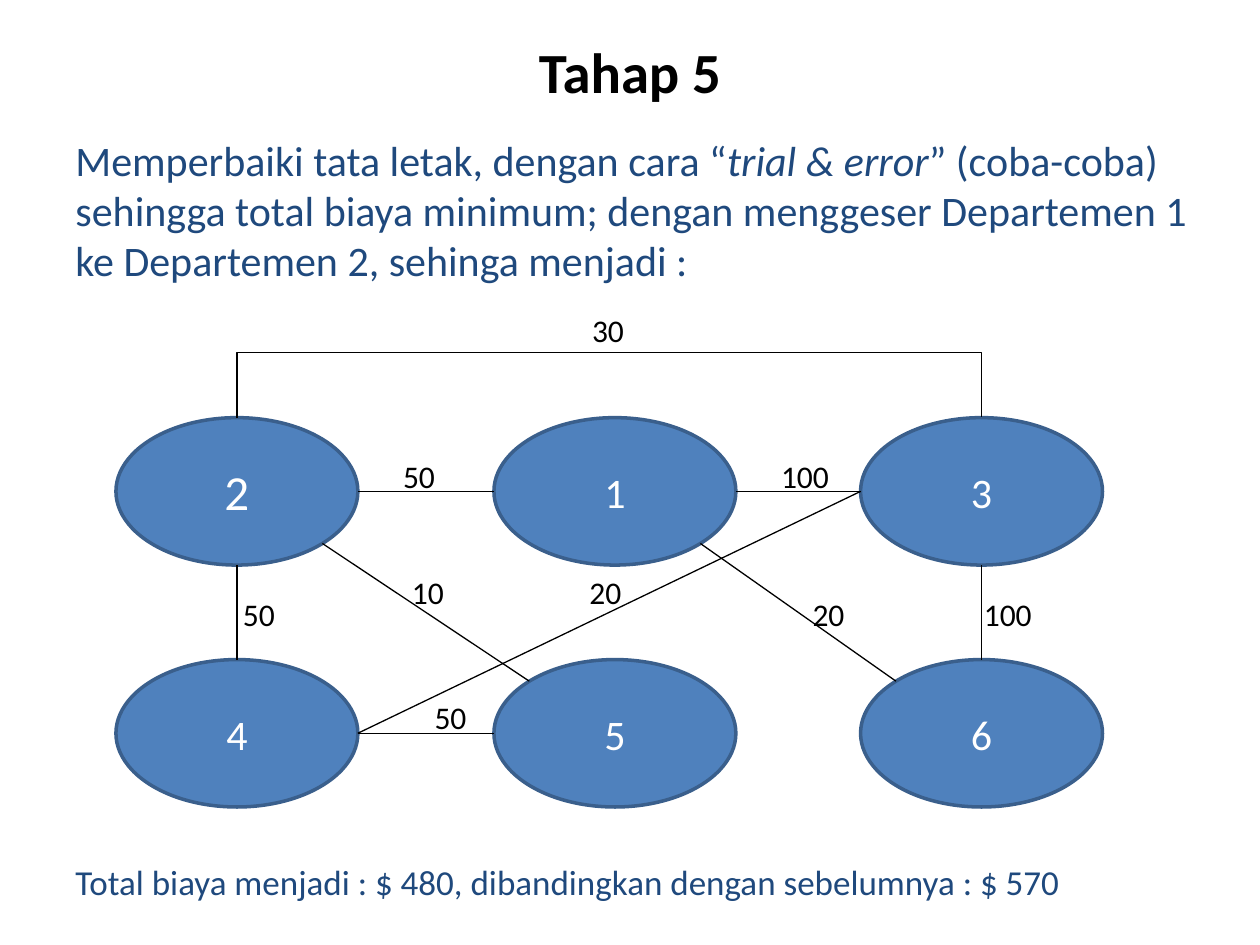
from math import sqrt

from lxml import etree
from pptx import Presentation
from pptx.dml.color import RGBColor
from pptx.enum.shapes import MSO_CONNECTOR, MSO_SHAPE
from pptx.enum.text import MSO_ANCHOR, PP_ALIGN
from pptx.oxml.ns import qn
from pptx.util import Inches, Pt

STRAIGHT, ELBOW = MSO_CONNECTOR.STRAIGHT, MSO_CONNECTOR.ELBOW
OVAL = MSO_SHAPE.OVAL
TOP, MIDDLE = MSO_ANCHOR.TOP, MSO_ANCHOR.MIDDLE
LEFT, CENTER = PP_ALIGN.LEFT, PP_ALIGN.CENTER

# Content
FONT = "Calibri"
COLORS = {"text": "000000", "body": "1F497D", "fill": "4F81BD",
          "edge": "3A5F8C", "white": "FFFFFF"}
TITLE = "Tahap 5"
INTRO = [
    ("Memperbaiki tata letak, dengan cara “", False),
    ("trial & error", True),
    ("” (coba-coba) sehingga total biaya minimum; dengan menggeser "
     "Departemen 1 ke Departemen 2, sehinga menjadi :", False),
]
TOTAL = "Total biaya menjadi : $ 480, dibandingkan dengan sebelumnya : $ 570"
DEPARTMENTS = [["2", "1", "3"], ["4", "5", "6"]]
TEXT_SIZES = {"2": 28}  # every other department uses 24 pt

# Flows: from, side, to, side, cost, label left and top
FLOWS = [
    ("2", "right", "1", "left", "50", 3.10, 3.58),
    ("1", "right", "3", "left", "100", 6.10, 3.58),
    ("4", "right", "3", "left", "20", 4.58, 4.50),
    ("3", "bottom", "6", "top", "100", 7.71, 4.67),
    ("4", "right", "5", "left", "50", 3.35, 5.49),
    ("2", "bottom", "4", "top", "50", 1.83, 4.67),
    ("2", "lower right", "5", "upper left", "10", 3.17, 4.50),
    ("1", "lower right", "6", "upper left", "20", 6.35, 4.67),
]
OUTER_FLOW = ("2", "3", "30", 4.60, 2.42)

# Grid of department centres
COLUMNS = [1.88, 4.88, 7.79]
ROWS = [3.9, 5.82]
OVAL_W, OVAL_H = 1.92, 1.17
BRACKET_RISE = 0.53
DIAGONAL = sqrt(0.5)
SIDES = {"left": (-1, 0), "right": (1, 0), "top": (0, -1), "bottom": (0, 1),
         "lower right": (DIAGONAL, DIAGONAL),
         "upper left": (-DIAGONAL, -DIAGONAL)}
CENTERS = {name: (x, y) for names, y in zip(DEPARTMENTS, ROWS)
           for name, x in zip(names, COLUMNS)}


def color(name):
    return RGBColor.from_string(COLORS[name])


def place(shape, left, top, width, height):
    shape.left, shape.top = Inches(left), Inches(top)
    shape.width, shape.height = Inches(width), Inches(height)


def write(shape, runs, size, tint, align=LEFT, anchor=MIDDLE, wrap=True, bold=False):
    frame = shape.text_frame
    frame.word_wrap = wrap
    frame.vertical_anchor = anchor
    para = frame.paragraphs[0]
    para.alignment = align
    for text, italic in runs:
        span = para.add_run()
        span.text = text
        font = span.font
        font.name, font.size, font.bold, font.italic = FONT, Pt(size), bold, italic
        font.color.rgb = color(tint)


def add_text(slide, area, runs, size, tint, **options):
    box = slide.shapes.add_textbox(*map(Inches, area))
    write(box, runs, size, tint, **options)


def add_label(slide, cost, left, top):
    width = 0.2 + 0.14 * len(cost)
    add_text(slide, (left, top, width, 0.4), [(cost, False)], 18, "text",
             anchor=TOP, wrap=False)


def add_department(slide, name):
    x, y = CENTERS[name]
    oval = slide.shapes.add_shape(OVAL, 0, 0, 0, 0)
    place(oval, x - OVAL_W / 2, y - OVAL_H / 2, OVAL_W, OVAL_H)
    oval.shadow.inherit = False
    oval.fill.solid()
    oval.fill.fore_color.rgb = color("fill")
    oval.line.color.rgb = color("edge")
    oval.line.width = Pt(2)
    write(oval, [(name, False)], TEXT_SIZES.get(name, 24), "white", align=CENTER)


def side_point(name, side):
    (x, y), (dx, dy) = CENTERS[name], SIDES[side]
    return x + dx * OVAL_W / 2, y + dy * OVAL_H / 2


def add_line(slide, kind, start, end):
    line = slide.shapes.add_connector(kind, *map(Inches, (*start, *end)))
    line.line.color.rgb = color("text")
    line.line.width = Pt(0.75)
    etree.SubElement(line._element.spPr, qn("a:effectLst"))
    return line


def add_bracket(slide, first, last):
    # A thin elbow turned by 90 degrees; its bend lies above both ovals
    (x1, y), (x2, _) = side_point(first, "top"), side_point(last, "top")
    middle, half, thin = (x1 + x2) / 2, (x2 - x1) / 2, 0.01
    line = add_line(slide, ELBOW, (middle + thin / 2, y + half),
                    (middle - thin / 2, y - half))
    properties = line._element.spPr
    properties.find(qn("a:xfrm")).set("rot", "5400000")
    geometry = properties.find(qn("a:prstGeom"))
    adjustments = geometry.find(qn("a:avLst"))
    if adjustments is None:
        adjustments = etree.SubElement(geometry, qn("a:avLst"))
    bend = round(BRACKET_RISE / thin * 100000)
    etree.SubElement(adjustments, qn("a:gd"), name="adj1", fmla=f"val {bend}")


def main():
    deck = Presentation()
    deck.slide_width, deck.slide_height = Inches(10), Inches(7.5)
    slide = deck.slides.add_slide(deck.slide_layouts[5])

    # Title and explanation
    title = slide.shapes.title
    place(title, 0.5, 0.25, 9, 0.62)
    write(title, [(TITLE, False)], 32.4, "text", align=CENTER, bold=True)
    add_text(slide, (0.5, 1, 9.25, 1.33), INTRO, 24, "body")

    # Departments
    for name in CENTERS:
        add_department(slide, name)

    # Flows and their costs
    first, last, cost, left, top = OUTER_FLOW
    add_bracket(slide, first, last)
    add_label(slide, cost, left, top)
    for start, start_side, end, end_side, cost, left, top in FLOWS:
        add_line(slide, STRAIGHT, side_point(start, start_side),
                 side_point(end, end_side))
        add_label(slide, cost, left, top)

    # Result
    add_text(slide, (0.5, 6.75, 9.25, 0.5), [(TOTAL, False)], 20, "body")
    deck.save("out.pptx")


if __name__ == "__main__":
    main()
